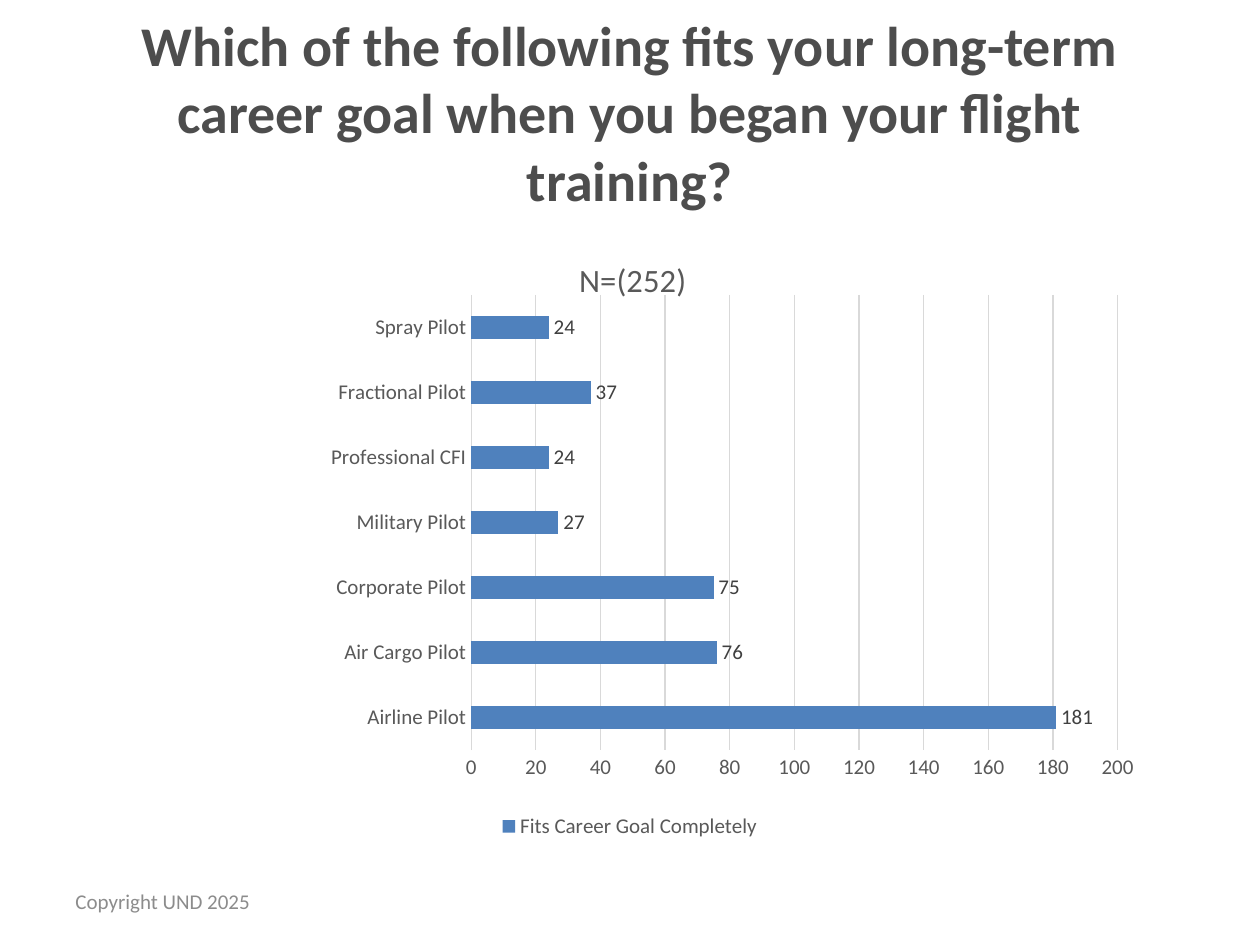
from dataclasses import dataclass

from lxml.etree import SubElement
from pptx import Presentation
from pptx.chart.data import CategoryChartData
from pptx.dml.color import RGBColor
from pptx.enum.chart import (XL_CHART_TYPE, XL_LABEL_POSITION,
                             XL_LEGEND_POSITION, XL_TICK_MARK)
from pptx.enum.text import MSO_ANCHOR, PP_ALIGN
from pptx.oxml.ns import qn
from pptx.util import Pt

PX = 914400 // 126


@dataclass(frozen=True)
class Theme:
    font: str = "Calibri"
    heading: str = "4D4D4D"
    muted: str = "595959"
    value: str = "404040"
    footer: str = "8C8C8C"
    grid: str = "D9D9D9"
    bar: str = "4F81BD"
    heading_size: float = 32
    chart_title_size: float = 18.6
    body_size: float = 12


THEME = Theme()
GOALS = {
    "Airline Pilot": 181,
    "Air Cargo Pilot": 76,
    "Corporate Pilot": 75,
    "Military Pilot": 27,
    "Professional CFI": 24,
    "Fractional Pilot": 37,
    "Spray Pilot": 24,
}


def scale(box):
    return [length * PX for length in box]


def style_font(font, color, size=THEME.body_size, bold=False):
    font.name = THEME.font
    font.size = Pt(size)
    font.bold = bold
    font.color.rgb = RGBColor.from_string(color)


def style_line(line, color):
    line.color.rgb = RGBColor.from_string(color)
    line.width = Pt(0.75)


def add_text(page, box, text, *, align=PP_ALIGN.LEFT, bottom=6, **style):
    frame = page.shapes.add_textbox(*scale(box)).text_frame
    frame.word_wrap = True
    frame.vertical_anchor = MSO_ANCHOR.MIDDLE
    frame.margin_bottom = bottom * PX
    para = frame.paragraphs[0]
    para.alignment = align
    span = para.add_run()
    span.text = text
    style_font(span.font, **style)


def set_layout(parent, **values):
    """Give a chart part a manual layout, in fractions of the chart."""
    layout = parent.find(qn("c:layout"))
    if layout is None:
        layout = SubElement(parent, qn("c:layout"))
    manual = SubElement(layout, qn("c:manualLayout"))
    for tag, value in values.items():
        SubElement(manual, qn(f"c:{tag}")).set("val", str(value))


def style_axis(axis):
    axis.major_tick_mark = axis.minor_tick_mark = XL_TICK_MARK.NONE
    style_font(axis.tick_labels.font, THEME.muted)


def add_goal_chart(page, box):
    data = CategoryChartData()
    data.categories = list(GOALS)
    data.add_series("Fits Career Goal Completely", list(GOALS.values()))
    chart = page.shapes.add_chart(
        XL_CHART_TYPE.BAR_CLUSTERED, *scale(box), data).chart
    style_font(chart.font, "000000", 10)

    # Title
    chart.has_title = True
    title = chart.chart_title
    title.include_in_layout = False
    title.text_frame.text = "N=(252)"
    style_font(title.text_frame.paragraphs[0].runs[0].font,
               THEME.muted, THEME.chart_title_size)
    set_layout(title._element, xMode="edge", yMode="edge", x=0.45, y=0.05)

    # Axes and plot area
    style_axis(chart.category_axis)
    style_line(chart.category_axis.format.line, THEME.grid)
    values = chart.value_axis
    style_axis(values)
    values.minimum_scale, values.maximum_scale, values.major_unit = 0, 200, 20
    values.format.line.fill.background()
    style_line(values.major_gridlines.format.line, THEME.grid)
    set_layout(chart.plots[0]._element.getparent(), layoutTarget="inner",
               xMode="edge", yMode="edge", x=0.36, y=0.12, w=0.57, h=0.73)

    # Bars and their values
    plot = chart.plots[0]
    plot.gap_width = 182
    plot.vary_by_categories = False
    series = plot.series[0]
    series.format.fill.solid()
    series.format.fill.fore_color.rgb = RGBColor.from_string(THEME.bar)
    labels = series.data_labels
    labels.show_value = True
    labels.position = XL_LABEL_POSITION.OUTSIDE_END
    style_font(labels.font, THEME.value)

    # Legend
    chart.has_legend = True
    chart.legend.position = XL_LEGEND_POSITION.BOTTOM
    chart.legend.include_in_layout = False
    style_font(chart.legend.font, THEME.muted)


def build_survey_page(page):
    # Question, raised within its box
    add_text(page, (63, 38, 1134, 214),
             "Which of the following fits your long-term career goal "
             "when you began your flight training?",
             align=PP_ALIGN.CENTER, bottom=73, color=THEME.heading,
             size=THEME.heading_size, bold=True)
    # Answers
    add_goal_chart(page, (63, 220, 1134, 624))
    # Footer
    add_text(page, (63, 876, 294, 50), "Copyright UND 2025",
             color=THEME.footer)


def main():
    deck = Presentation()
    deck.slide_width, deck.slide_height = scale((1260, 945))
    build_survey_page(deck.slides.add_slide(deck.slide_layouts[6]))
    deck.save("out.pptx")


if __name__ == "__main__":
    main()
